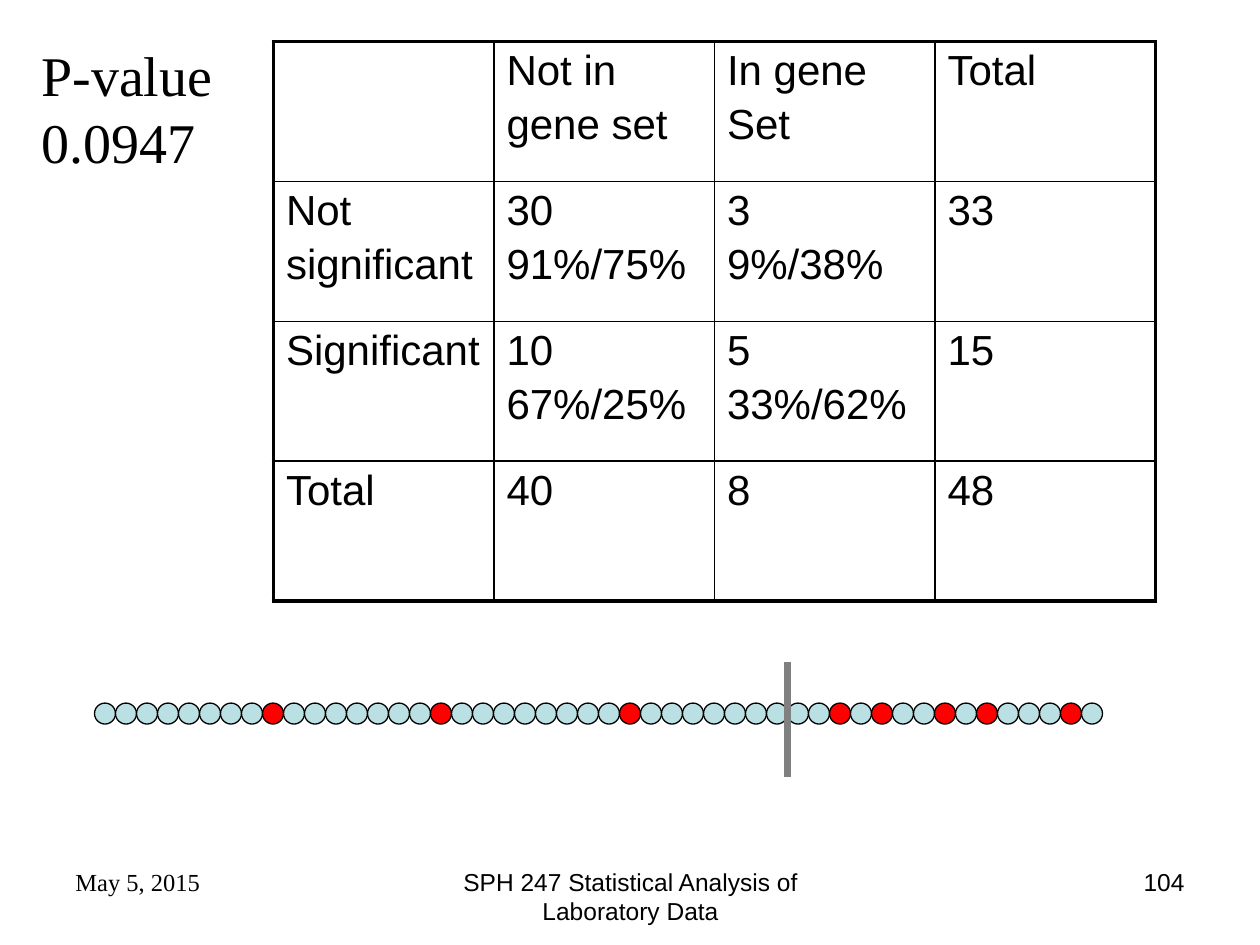
from lxml import etree
from pptx import Presentation
from pptx.dml.color import RGBColor
from pptx.enum.shapes import MSO_CONNECTOR, MSO_SHAPE
from pptx.enum.text import MSO_AUTO_SIZE, PP_ALIGN
from pptx.oxml.ns import qn
from pptx.util import Inches, Pt

LEFT, CENTER, RIGHT = PP_ALIGN.LEFT, PP_ALIGN.CENTER, PP_ALIGN.RIGHT
OVAL, STRAIGHT = MSO_SHAPE.OVAL, MSO_CONNECTOR.STRAIGHT
FIT_SHAPE = MSO_AUTO_SIZE.SHAPE_TO_FIT_TEXT
SERIF, SANS = "Times New Roman", "Arial"
BLACK, GRAY, RED, PALE_BLUE = "000000", "808080", "FF0000", "BBE0E3"

P_VALUE = ["P-value", "0.0947"]
COUNTS = [
    [[], ["Not in", "gene set"], ["In gene", "Set"], ["Total"]],
    [["Not", "significant"], ["30", "91%/75%"], ["3", "9%/38%"], ["33"]],
    [["Significant"], ["10", "67%/25%"], ["5", "33%/62%"], ["15"]],
    [["Total"], ["40"], ["8"], ["48"]],
]
GENE_COUNT = 48
GENES_IN_SET = {8, 16, 25, 35, 37, 40, 42, 46}
FOOTER = [
    ("May 5, 2015", 0.5, 2.33, SERIF, LEFT),
    ("SPH 247 Statistical Analysis of Laboratory Data", 3.42, 3.17, SANS, CENTER),
    ("104", 7.17, 2.33, SANS, RIGHT),
]

TABLE_LEFT, TABLE_TOP = 0.23 + 1.94, 0.33
COLUMN_WIDTH, ROW_HEIGHT = 1.75, 1.11
GENES_LEFT, GENES_TOP, GENE_SIZE = 0.75, 5.58, 1 / 6


def color(hex_code):
    return RGBColor.from_string(hex_code)


def write(frame, lines, font, size, align=LEFT, space_before=0):
    for index, line in enumerate(lines):
        paragraph = frame.paragraphs[0] if index == 0 else frame.add_paragraph()
        paragraph.alignment = align
        paragraph.space_before = Pt(space_before)
        run = paragraph.add_run()
        run.text = line
        run.font.name = font
        run.font.size = Pt(size)
        run.font.color.rgb = color(BLACK)


def add_text(slide, lines, box, font, size, align=LEFT, wrap=True):
    frame = slide.shapes.add_textbox(*map(Inches, box)).text_frame
    frame.word_wrap = wrap
    write(frame, lines, font, size, align)
    return frame


def set_borders(cell, widths):
    properties = cell._tc.get_or_add_tcPr()
    for position, (side, width) in enumerate(widths.items()):
        border = etree.Element(qn(f"a:ln{side}"), w=str(Pt(width)))
        fill = etree.SubElement(border, qn("a:solidFill"))
        etree.SubElement(fill, qn("a:srgbClr"), val=BLACK)
        properties.insert(position, border)


def add_genes(slide):
    for index in range(GENE_COUNT):
        gene = slide.shapes.add_shape(
            OVAL, Inches(GENES_LEFT + index * GENE_SIZE), Inches(GENES_TOP),
            Inches(GENE_SIZE), Inches(GENE_SIZE))
        gene.shadow.inherit = False
        gene.fill.solid()
        gene.fill.fore_color.rgb = color(RED if index in GENES_IN_SET else PALE_BLUE)
        gene.line.color.rgb = color(BLACK)
        gene.line.width = Pt(0.75)


def add_cutoff(slide):
    cutoff = slide.shapes.add_connector(
        STRAIGHT, Inches(6.25), Inches(5.25), Inches(6.25), Inches(6.17))
    cutoff.line.color.rgb = color(GRAY)
    cutoff.line.width = Pt(4)
    etree.SubElement(cutoff._element.spPr, qn("a:effectLst"))


def add_counts(slide):
    row_count, column_count = len(COUNTS), len(COUNTS[0])
    table = slide.shapes.add_table(
        row_count, column_count, Inches(TABLE_LEFT), Inches(TABLE_TOP),
        Inches(COLUMN_WIDTH * column_count), Inches(ROW_HEIGHT * row_count)).table
    table.first_row = False
    table.horz_banding = False
    for r, row in enumerate(COUNTS):
        for c, lines in enumerate(row):
            cell = table.cell(r, c)
            cell.fill.background()
            write(cell.text_frame, lines, SANS, 24, space_before=4)
            outer = {"L": c == 0, "R": c == column_count - 1,
                     "T": r == 0, "B": r == row_count - 1}
            set_borders(cell, {side: 2.25 if edge else 1 for side, edge in outer.items()})


def main():
    deck = Presentation()
    deck.slide_width, deck.slide_height = Inches(10), Inches(7.5)
    slide = deck.slides.add_slide(deck.slide_layouts[6])
    add_genes(slide)
    add_cutoff(slide)
    add_counts(slide)
    p_value = add_text(slide, P_VALUE, (0.23, 0.27, 1.56, 1.17), SERIF, 32, wrap=False)
    p_value.auto_size = FIT_SHAPE
    for text, left, width, font, align in FOOTER:
        add_text(slide, [text], (left, 6.83, width, 0.52), font, 14, align)
    deck.save("out.pptx")


if __name__ == "__main__":
    main()
